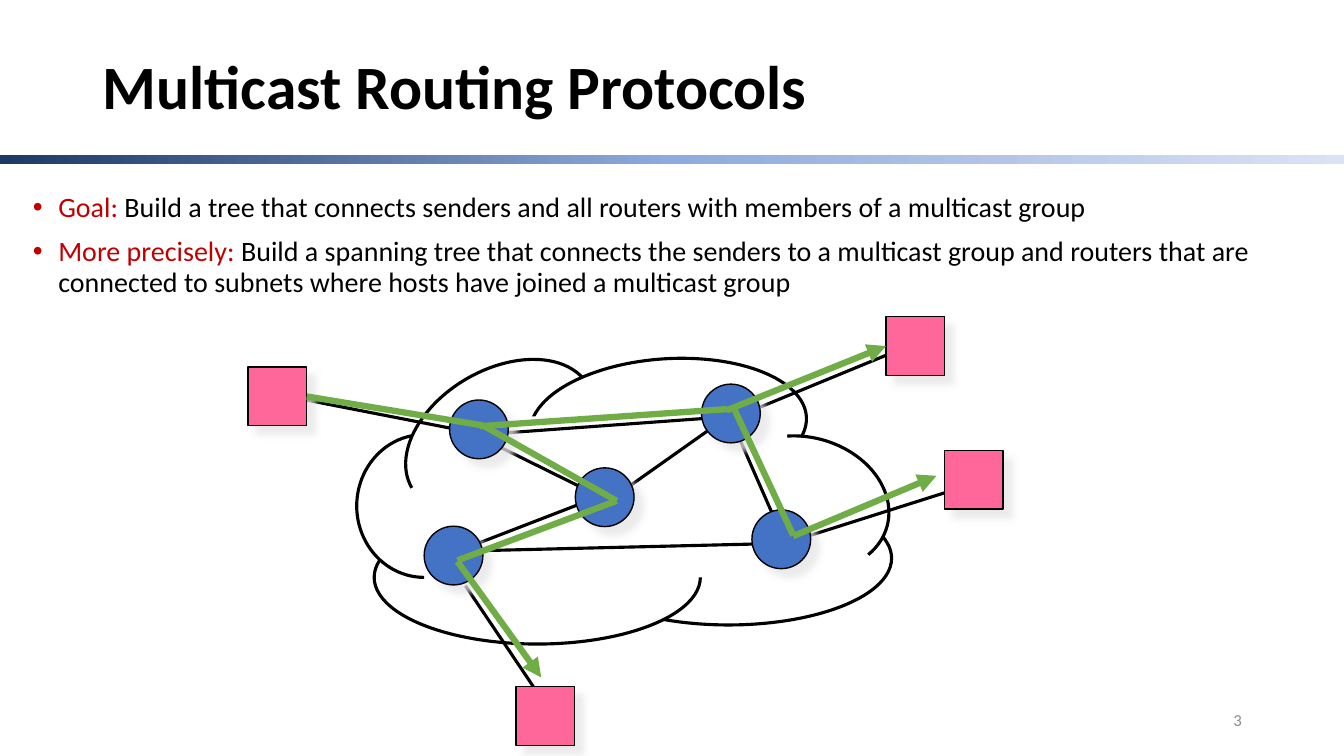
from copy import deepcopy
from dataclasses import dataclass

from lxml.etree import SubElement
from pptx import Presentation
from pptx.dml.color import RGBColor
from pptx.enum.shapes import MSO_CONNECTOR, MSO_SHAPE
from pptx.enum.text import MSO_ANCHOR, PP_ALIGN
from pptx.oxml.ns import qn
from pptx.util import Cm, Pt


@dataclass(frozen=True)
class Theme:
    font: str = "Calibri"
    title_size: int = 44
    body_size: int = 20
    number_size: int = 12
    text: str = "000000"
    accent: str = "C00000"
    muted: str = "8C8C8C"
    white: str = "FFFFFF"
    router: str = "4472C4"
    subnet: str = "FF6699"
    tree: str = "70AD47"
    shadow: str = "E7E6E6"
    band: tuple = ((0, "203864"), (0.5, "8FAADC"), (1, "DAE3F3"))


NODE = 1.48  # side of every router and subnet
WIDTH = 33.87

BULLETS = [
    ("Goal:", " Build a tree that connects senders and all routers "
              "with members of a multicast group"),
    ("More precisely: ", "Build a spanning tree that connects the senders to a "
                         "multicast group and routers that are connected to "
                         "subnets where hosts have joined a multicast group"),
]

# centre x, centre y, radius x, radius y, rotation, start angle, end angle
CLOUD_ARCS = [
    (18.36, 14.07, 4.11, 1.68, 0, 348.3, 136.8),
    (13.54, 14.55, 4.11, 1.68, 0, 0, 193.2),
    (10.69, 12.75, 1.7, 1.8, 0, 90, 297.7),
    (12.6, 11, 2.57, 1.68, -30.2, 180, 43.4),
    (16.84, 10.72, 3.49, 1.68, -3.6, 180, 34.8),
    (20.27, 12.7, 2.16, 1.68, 14.9, 211.1, 23.5),
]

ROUTERS = [(14.5, 11.79), (10.69, 13.26), (17.68, 9.68), (18.95, 12.85), (11.33, 10.08)]
SUBNETS = {"sender": (6.25, 9.25), "north": (22.33, 7.98),
           "east": (23.8, 11.35), "south": (13, 17.3)}

LINKS = [
    ((11.53, 13.89), (19.79, 13.69)),
    ((18.31, 10.31), (19.79, 13.69)),
    ((15.34, 12.62), (11.96, 10.95)),
    ((15.34, 12.62), (18.31, 10.52)),
    ((11.53, 13.89), (15.34, 12.42)),
    ((18.08, 10.52), (12.17, 10.95)),
    ((12.17, 10.95), (7.72, 10.08)),
    ((23.16, 8.61), (18.52, 10.52)),
    ((24.43, 12.22), (19.79, 13.69)),
    ((13.44, 17.3), (11.73, 14.76)),
]

# start, end, has arrowhead
TREE = [
    ((7.72, 9.88), (12.17, 10.72), False),
    ((12.09, 10.74), (18.31, 10.31), False),
    ((18.31, 10.34), (22.33, 8.61), True),
    ((12.17, 10.72), (15.54, 12.62), False),
    ((11.53, 14.15), (13.64, 17.07), True),
    ((18.52, 10.34), (19.99, 13.49), False),
    ((11.53, 14.12), (15.54, 12.62), False),
    ((19.99, 13.51), (23.6, 11.99), True),
]


class SlideBuilder:
    def __init__(self, slide, theme):
        self.slide, self.theme = slide, theme

    def shape(self, kind, x, y, w, h, fill, line_width=None):
        sp = self.slide.shapes.add_shape(kind, Cm(x), Cm(y), Cm(w), Cm(h))
        sp.shadow.inherit = False
        sp.fill.solid()
        sp.fill.fore_color.rgb = RGBColor.from_string(fill)
        if line_width is None:
            sp.line.fill.background()
        else:
            sp.line.color.rgb = RGBColor.from_string(self.theme.text)
            sp.line.width = Pt(line_width)
        return sp

    def band(self, x, y, w, h):
        sp = self.shape(MSO_SHAPE.RECTANGLE, x, y, w, h, self.theme.white)
        sp.fill.gradient()
        sp.fill.gradient_angle = 0
        stops = sp._element.spPr.find(".//" + qn("a:gsLst"))
        stops.append(deepcopy(stops[0]))
        for stop, (position, color) in zip(sp.fill.gradient_stops, self.theme.band):
            stop.position = position
            stop.color.rgb = RGBColor.from_string(color)

    def arc(self, cx, cy, rx, ry, rotation, start, end):
        """Draw a filled arc running clockwise; angles are in degrees."""
        sp = self.shape(MSO_SHAPE.ARC, cx - rx, cy - ry, 2 * rx, 2 * ry,
                        self.theme.white, 2.25)
        sp.rotation = rotation
        # adjustments count 100000ths, angles count 60000ths of a degree
        sp.adjustments[0], sp.adjustments[1] = start * 0.6, end * 0.6

    def node(self, kind, x, y, fill):
        sp = self.shape(kind, x, y, NODE, NODE, fill, 1)
        effects = sp._element.spPr.find(qn("a:effectLst"))
        shadow = SubElement(effects, qn("a:outerShdw"), blurRad=str(Pt(5)),
                            dist=str(Pt(8.5)), dir="2700000", algn="ctr",
                            rotWithShape="0")
        color = SubElement(shadow, qn("a:srgbClr"), val=self.theme.shadow)
        SubElement(color, qn("a:alpha"), val="75000")
        return sp

    def line(self, start, end, color, width, arrow=False):
        cn = self.slide.shapes.add_connector(
            MSO_CONNECTOR.STRAIGHT, *(Cm(v) for v in (*start, *end)))
        cn.line.color.rgb = RGBColor.from_string(color)
        cn.line.width = Pt(width)
        SubElement(cn._element.spPr, qn("a:effectLst"))
        if arrow:
            SubElement(cn.line._get_or_add_ln(), qn("a:tailEnd"), type="triangle")
        return cn

    def text(self, x, y, w, h, anchor=MSO_ANCHOR.MIDDLE):
        tf = self.slide.shapes.add_textbox(Cm(x), Cm(y), Cm(w), Cm(h)).text_frame
        tf.word_wrap = True
        tf.vertical_anchor = anchor
        return tf

    def style(self, r, size, color, bold=False):
        r.font.name, r.font.size, r.font.bold = self.theme.font, Pt(size), bold
        r.font.color.rgb = RGBColor.from_string(color)

    def label(self, box, text, size, color, bold=False, align=PP_ALIGN.LEFT):
        tf = self.text(*box)
        tf.text = text
        p = tf.paragraphs[0]
        p.alignment, p.line_spacing = align, 0.9
        self.style(p.runs[0], size, color, bold)

    def bullets(self, box, items):
        """Write one bulleted paragraph per (lead, rest) pair."""
        tf = self.text(*box, anchor=MSO_ANCHOR.TOP)
        for i, item in enumerate(items):
            p = tf.add_paragraph() if i else tf.paragraphs[0]
            p.line_spacing, p.space_before = 0.9, Pt(10)
            pPr = p._p.get_or_add_pPr()
            indent = Cm(0.64)
            pPr.set("marL", str(indent))
            pPr.set("indent", str(-indent))
            SubElement(pPr, qn("a:buFont"), typeface="Arial")
            SubElement(pPr, qn("a:buChar"), char="•")
            for text, color in zip(item, (self.theme.accent, self.theme.text)):
                r = p.add_run()
                r.text = text
                self.style(r, self.theme.body_size, color)


def main():
    prs = Presentation()
    prs.slide_width, prs.slide_height = Cm(WIDTH), Cm(19.05)
    theme = Theme()
    s = SlideBuilder(prs.slides.add_slide(prs.slide_layouts[6]), theme)

    s.band(0, 3.91, WIDTH, 0.23)
    s.label((2.34, 1.02, 29.21, 2.46), "Multicast Routing Protocols",
            theme.title_size, theme.text, bold=True)
    s.bullets((0.58, 4.75, 32.92, 3.51), BULLETS)
    s.label((23.93, 17.65, 7.62, 1.02), "3", theme.number_size, theme.muted,
            align=PP_ALIGN.RIGHT)

    for arc in CLOUD_ARCS:
        s.arc(*arc)
    s.shape(MSO_SHAPE.RECTANGLE, 11.15, 10.49, 8.69, 3.12, theme.white)

    for start, end in LINKS:
        s.line(start, end, theme.text, 2.25)
    for x, y in ROUTERS:
        s.node(MSO_SHAPE.OVAL, x, y, theme.router)
    subnets = {name: s.node(MSO_SHAPE.RECTANGLE, x, y, theme.subnet)
               for name, (x, y) in SUBNETS.items()}

    branches = [s.line(start, end, theme.tree, 4.5, arrow)
                for start, end, arrow in TREE]
    branches[0].begin_connect(subnets["sender"], 3)
    branches[2].end_connect(subnets["north"], 1)

    prs.save("out.pptx")


if __name__ == "__main__":
    main()
